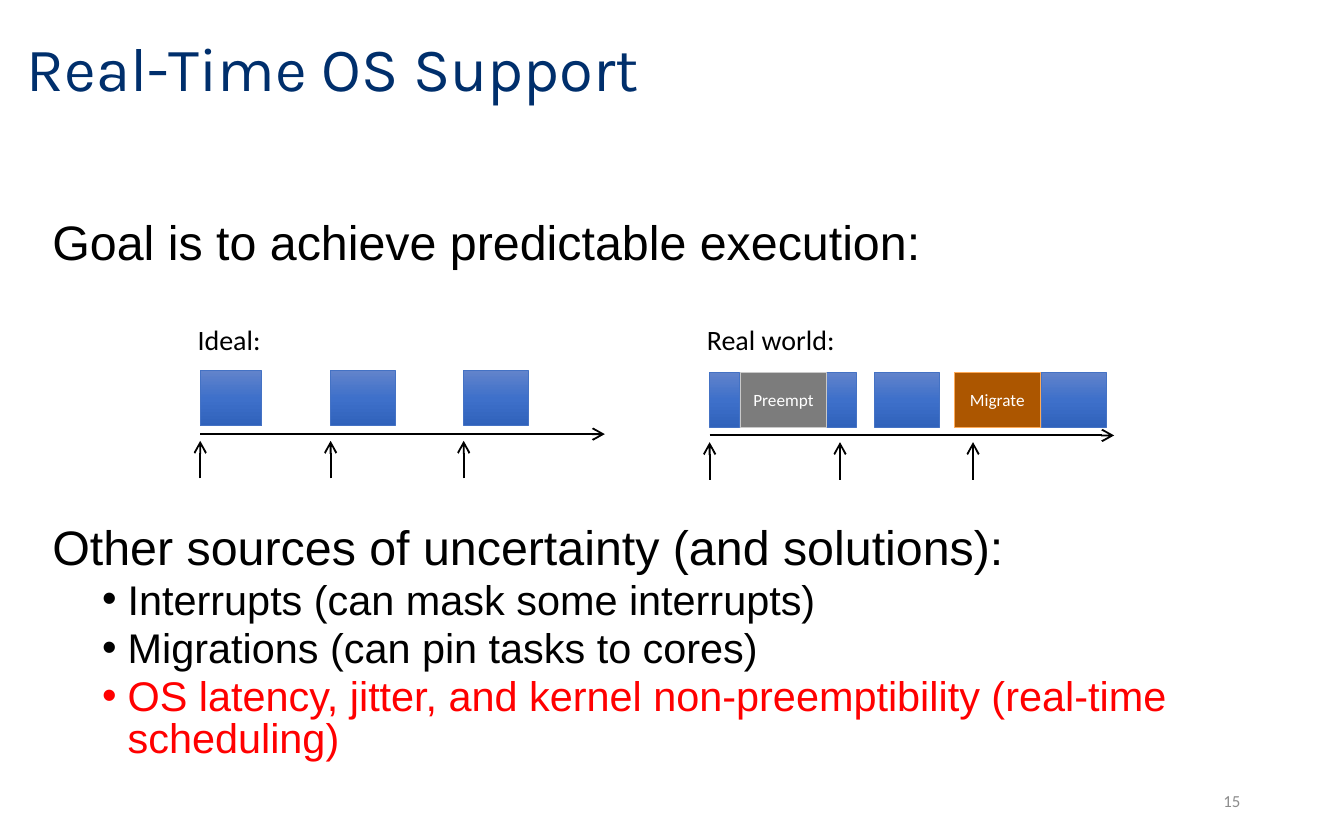
import copy

import lxml.etree
import pptx
import pptx.dml.color
import pptx.enum.shapes
import pptx.enum.text
import pptx.oxml.ns
import pptx.util

Inches = pptx.util.Inches
Pt = pptx.util.Pt
qn = pptx.oxml.ns.qn
ALIGN = pptx.enum.text.PP_ALIGN
ANCHOR = pptx.enum.text.MSO_ANCHOR

BLACK, WHITE, RED = "000000", "FFFFFF", "FF0000"
TASK_STOPS = [(0, "6183CB"), (0.5, "3E70CA"), (1, "3062BB")]
TASK_LINE = "4472C4"
RELEASES = (0, 0.97, 1.96)
AXIS_LENGTH = 3.01
TASK_HEIGHT = 0.41


def rgb(value):
    return pptx.dml.color.RGBColor.from_string(value)


def apply(target, values):
    for name, value in values.items():
        setattr(target, name, value)


class SlideBuilder:
    frame_format = {
        "margin_left": Inches(0.08), "margin_right": Inches(0.08),
        "margin_top": Inches(0.04), "margin_bottom": Inches(0.04),
        "word_wrap": True, "auto_size": pptx.enum.text.MSO_AUTO_SIZE.NONE,
    }

    def __init__(self, slide):
        self.slide = slide

    def place(self, shape, left, top, width, height):
        apply(shape, {"left": Inches(left), "top": Inches(top),
                      "width": Inches(width), "height": Inches(height)})

    def frame(self, shape, anchor):
        apply(shape.text_frame, self.frame_format)
        shape.text_frame.vertical_anchor = anchor
        return shape.text_frame

    def add_text(self, paragraph, text, size, font="Calibri", color=BLACK, **layout):
        apply(paragraph, layout)
        run = paragraph.add_run()
        run.text = text
        apply(run.font, {"size": Pt(size), "name": font})
        run.font.color.rgb = rgb(color)

    def title(self, text):
        title = self.slide.shapes.title
        self.place(title, 0.12, 0.1, 8.52, 0.86)
        frame = self.frame(title, ANCHOR.MIDDLE)
        self.add_text(frame.paragraphs[0], text, 33, "Karla", "002F6C",
                      alignment=ALIGN.LEFT, line_spacing=0.9)

    def body(self, entries):
        """Fill the body with (text, is_bullet, space before, colour) entries."""
        body = self.slide.placeholders[1]
        self.place(body, 0.31, 1.61, 8.86, 4.12)
        frame = self.frame(body, ANCHOR.TOP)
        for index, (text, is_bullet, before, color) in enumerate(entries):
            paragraph = frame.add_paragraph() if index else frame.paragraphs[0]
            paragraph.level = int(is_bullet)
            properties = paragraph._p.get_or_add_pPr()
            properties.set("marL", str(Inches(0.56 if is_bullet else 0)))
            properties.set("indent", str(Inches(-0.19 if is_bullet else 0)))
            if is_bullet:
                lxml.etree.SubElement(properties, qn("a:buFont")).set("typeface", "Arial")
                lxml.etree.SubElement(properties, qn("a:buChar")).set("char", "•")
            else:
                lxml.etree.SubElement(properties, qn("a:buNone"))
            self.add_text(paragraph, text, 22.2 if is_bullet else 25.9, "Arial", color,
                          line_spacing=0.83, space_before=Pt(before), space_after=Pt(0))

    def label(self, text, box, size, color=BLACK, align=ALIGN.LEFT, anchor=ANCHOR.TOP):
        label = self.slide.shapes.add_textbox(*map(Inches, box))
        self.add_text(self.frame(label, anchor).paragraphs[0], text, size,
                      color=color, alignment=align)

    def arrow(self, start, end):
        arrow = self.slide.shapes.add_connector(
            pptx.enum.shapes.MSO_CONNECTOR.STRAIGHT, *map(Inches, start + end))
        arrow.line.color.rgb = rgb(BLACK)
        arrow.line.width = Pt(1)
        properties = arrow._element.spPr
        line = properties.find(qn("a:ln"))
        lxml.etree.SubElement(line, qn("a:tailEnd")).set("type", "arrow")
        lxml.etree.SubElement(properties, qn("a:effectLst"))

    def block(self, left, top, width, outline):
        block = self.slide.shapes.add_shape(
            pptx.enum.shapes.MSO_SHAPE.RECTANGLE,
            *map(Inches, (left, top, width, TASK_HEIGHT)))
        block.shadow.inherit = False
        block.line.color.rgb = rgb(outline)
        block.line.width = Pt(0.5)
        return block

    def task(self, left, top, width):
        block = self.block(left, top, width, TASK_LINE)
        block.fill.gradient()
        block.fill.gradient_angle = 270
        stop_list = block._element.spPr.find(qn("a:gradFill")).find(qn("a:gsLst"))
        stop_list.append(copy.deepcopy(stop_list[0]))
        for stop, (position, color) in zip(block.fill.gradient_stops, TASK_STOPS):
            stop.position = position
            stop.color.rgb = rgb(color)

    def disturbance(self, text, left, top, fill, outline):
        block = self.block(left, top, 0.64, outline)
        block.fill.solid()
        block.fill.fore_color.rgb = rgb(fill)
        self.add_text(self.frame(block, ANCHOR.MIDDLE).paragraphs[0], text, 9.2,
                      color=WHITE, alignment=ALIGN.CENTER)

    def timeline(self, heading, heading_width, left, top, tasks):
        """Draw a heading, its tasks, the time axis and the release arrows."""
        self.label(heading, (left - 0.1, 2.36, heading_width, 0.35), 15)
        axis = top + 0.47
        self.arrow((left, axis), (left + AXIS_LENGTH, axis))
        for release in RELEASES:
            self.arrow((left + release, top + 0.8), (left + release, top + 0.52))
        for offset, width in tasks:
            self.task(left + offset, top, width)


def main():
    deck = pptx.Presentation()
    deck.slide_width, deck.slide_height = Inches(10), Inches(6.25)
    builder = SlideBuilder(deck.slides.add_slide(deck.slide_layouts[1]))

    builder.title("Real-Time OS Support")
    builder.body([
        ("Goal is to achieve predictable execution:", False, 0, BLACK),
        ("Other sources of uncertainty (and solutions):", False, 137.6, BLACK),
        ("Interrupts (can mask some interrupts)", True, 3.8, BLACK),
        ("Migrations (can pin tasks to cores)", True, 3.8, BLACK),
        ("OS latency, jitter, and kernel non-preemptibility (real-time scheduling)",
         True, 3.8, RED),
    ])
    builder.label("15", (7.06, 5.79, 2.25, 0.33), 9, "8C8C8C", ALIGN.RIGHT, ANCHOR.MIDDLE)

    builder.timeline("Ideal:", 0.68, 1.49, 2.76, zip(RELEASES, (0.46, 0.48, 0.48)))
    real_top = 2.77
    builder.timeline("Real world:", 1.16, 5.28, real_top,
                     [(0, 0.22), (0.87, 0.22), (1.23, 0.48), (2.47, 0.48)])
    builder.disturbance("Preempt", 5.51, real_top, "7C7C7C", "C9C9C9")
    builder.disturbance("Migrate", 7.1, real_top, "AC5600", "FFAA56")

    deck.save("out.pptx")


if __name__ == "__main__":
    main()
